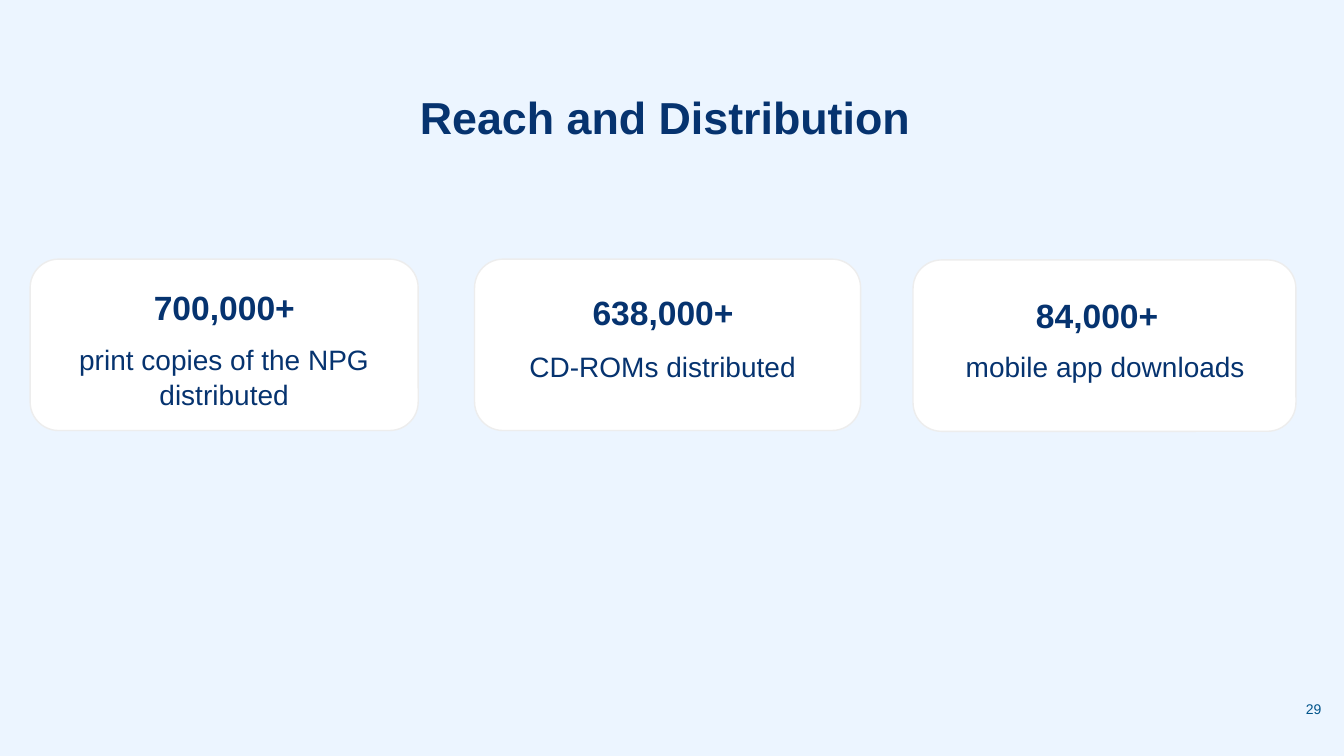
from dataclasses import dataclass

from pptx import Presentation
from pptx import util as u
from pptx.dml.color import RGBColor
from pptx.enum import shapes, text


@dataclass(frozen=True)
class Theme:
    """Colours, font and type sizes of the slide."""
    background: str = "ECF5FF"
    card: str = "FFFFFF"
    border: str = "EDEDED"
    ink: str = "06336F"
    page: str = "00538A"
    font: str = "Arial"
    title_size: int = 32
    figure_size: int = 24
    caption_size: int = 20
    page_size: int = 10


THEME = Theme()

CARDS = [
    ((0.76, 6.53, 9.78, 4.32),
     ("700,000+", (1.12, 7.11, 9.07, 1.09)),
     ("print copies of the NPG distributed", (1.19, 8.51, 8.92, 1.02))),
    ((11.96, 6.53, 9.73, 4.32),
     ("638,000+", (12.57, 7.24, 8.28, 0.86)),
     ("CD-ROMs distributed", (12.65, 8.71, 8.1, 0.81))),
    ((23.01, 6.55, 9.65, 4.32),
     ("84,000+", (23.7, 7.32, 7.9, 0.76)),
     ("mobile app downloads", (23.98, 8.71, 7.75, 0.71))),
]


def cm_box(box):
    """Turn left, top, width and height in centimetres into lengths."""
    return [u.Cm(value) for value in box]


def write(frame, wording, size, colour=THEME.ink, bold=False,
          align=text.PP_ALIGN.CENTER, insets=(0.1, 0.05), after=2, spacing=1.07):
    """Set one paragraph of formatted text in a text frame."""
    frame.word_wrap = True
    frame.auto_size = text.MSO_AUTO_SIZE.NONE
    frame.vertical_anchor = text.MSO_ANCHOR.TOP
    frame.margin_left = frame.margin_right = u.Cm(insets[0])
    frame.margin_top = frame.margin_bottom = u.Cm(insets[1])
    paragraph = frame.paragraphs[0]
    paragraph.alignment = align
    paragraph.space_before = u.Pt(0)
    paragraph.space_after = u.Pt(after)
    paragraph.line_spacing = spacing
    run = paragraph.add_run()
    run.text = wording
    run.font.name = THEME.font
    run.font.size = u.Pt(size)
    run.font.bold = bold
    run.font.color.rgb = RGBColor.from_string(colour)


def place_title(slide, wording, box):
    """Move and fill the title placeholder."""
    title = slide.shapes.title
    title.left, title.top, title.width, title.height = cm_box(box)
    write(title.text_frame, wording, THEME.title_size, bold=True)


def add_card(slide, box, figure, caption):
    """Draw a grouped rounded card with a figure above its caption."""
    group = slide.shapes.add_group_shape()
    card = group.shapes.add_shape(shapes.MSO_SHAPE.ROUNDED_RECTANGLE, *cm_box(box))
    card.shadow.inherit = False
    card.fill.solid()
    card.fill.fore_color.rgb = RGBColor.from_string(THEME.card)
    card.line.color.rgb = RGBColor.from_string(THEME.border)
    card.line.width = u.Pt(1)
    for (wording, place), size, bold in ((figure, THEME.figure_size, True),
                                         (caption, THEME.caption_size, False)):
        label = group.shapes.add_textbox(*cm_box(place))
        write(label.text_frame, wording, size, bold=bold)


def add_page_number(slide, number, box):
    """Write the page number in the lower right corner."""
    page = slide.shapes.add_textbox(*cm_box(box))
    write(page.text_frame, number, THEME.page_size, THEME.page,
          align=text.PP_ALIGN.RIGHT, insets=(0, 0), after=0, spacing=1.0)
    page.text_frame.word_wrap = False


def main():
    """Build and save the slide."""
    deck = Presentation()
    deck.slide_width, deck.slide_height = u.Cm(33.87), u.Cm(19.05)
    slide = deck.slides.add_slide(deck.slide_layouts.get_by_name("Title Only"))
    slide.background.fill.solid()
    slide.background.fill.fore_color.rgb = RGBColor.from_string(THEME.background)
    place_title(slide, "Reach and Distribution", (1.65, 2.11, 30.23, 1.4))
    for box, figure, caption in CARDS:
        add_card(slide, box, figure, caption)
    add_page_number(slide, "29", (32.92, 17.65, 0.38, 0.43))
    deck.save("out.pptx")


if __name__ == "__main__":
    main()
